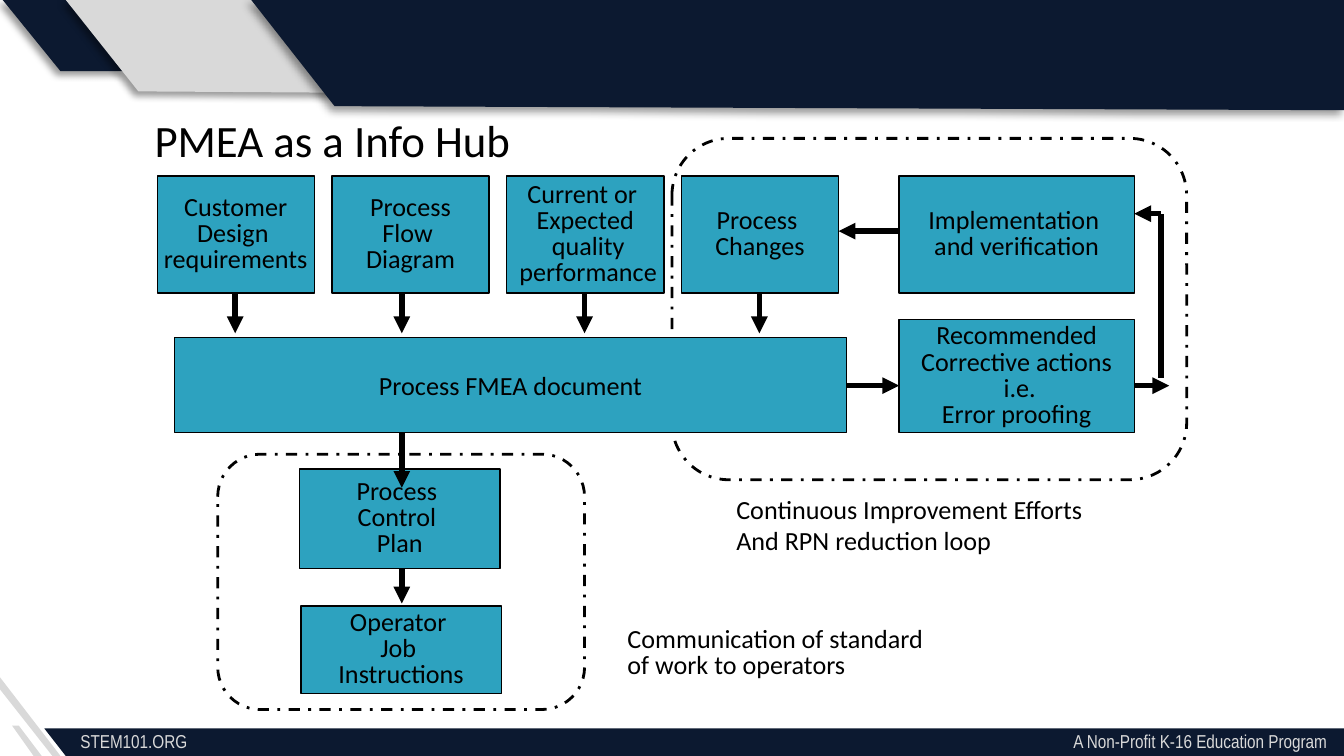
from lxml.etree import SubElement
from pptx import Presentation
from pptx.dml.color import RGBColor
from pptx.enum.dml import MSO_LINE
from pptx.enum.shapes import MSO_CONNECTOR, MSO_SHAPE
from pptx.enum.text import MSO_ANCHOR, MSO_AUTO_SIZE, PP_ALIGN
from pptx.oxml.ns import qn
from pptx.util import Inches, Pt

WIDE = 10
HIGH = WIDE * 9 / 16
UNITS = 1000  # freeform units to the inch
COLORS = {"navy": "0C1930", "gray": "D9D9D9", "teal": "2DA2BF", "ink": "000000"}

# Backdrop: colour, shadow, corner points
BANDS = [
    ("navy", True, [(0.45, 0.53), (0.02, 0), (0.5, 0), (0.93, 0.53)]),
    ("gray", True, [(1.03, 0.68), (0.49, 0), (2.06, 0), (2.59, 0.69)]),
    ("gray", False, [(0.31, HIGH), (0.25, HIGH), (0.09, 5.4), (0.14, 5.4)]),
    ("gray", False, [(0.45, HIGH), (0.39, HIGH), (0, 5.13), (0, 5.04)]),
    ("navy", True, [(2.49, 0.79), (1.87, 0), (WIDE, 0), (WIDE, 0.82)]),
    ("navy", False, [(WIDE, HIGH), (0.49, HIGH), (0.33, 5.42), (WIDE, 5.42)]),
]
FOOT = [("STEM101.ORG", PP_ALIGN.LEFT),
        ("A Non-Profit K-16 Education Program", PP_ALIGN.RIGHT)]

# Flow chart content
TITLE = "PMEA as a Info Hub"
INPUTS = [
    ["Customer", "Design ", "requirements"],
    ["Process", "Flow ", "Diagram"],
    ["Current or ", "Expected", " quality", " performance"],
    ["Process ", "Changes"],
]
ACTIONS = [
    (["Implementation ", "and verification"], 1.31, 0.87),
    (["Recommended", "Corrective actions", " i.e.", "Error proofing"], 2.38, 0.84),
]
PLANS = [
    (["Process ", "Control ", "Plan"], 2.23, 3.49, 0.74),
    (["Operator ", "Job ", "Instructions"], 2.24, 4.51, 0.65),
]
HUB = ["Process FMEA document"]
NOTES = [
    (["Continuous Improvement Efforts", "And RPN reduction loop"],
     (5.38, 3.62, 2.95, 0.57), None),
    (["Communication of standard", "of work to operators"],
     (4.57, 4.62, 2.59, 0.5), 14),
]

# Grid of the chart
LEFT, STEP, TOP = 1.17, 1.3, 1.31
BOX_W, BOX_H = 1.17, 0.87
ACT_X, ACT_W, PLAN_W = 6.69, 1.75, 1.49
ACT_R = ACT_X + ACT_W
HUB_AT = (1.3, 2.51, 5, 0.71)
HUB_R = HUB_AT[0] + HUB_AT[2]
MID_Y = 2.87
STEM_X, LOOP_X, LOOP_Y = 2.99, 8.64, 1.59
DROPS = [1.75, STEM_X, 4.35, 5.65]
FRAMES = [(1.62, 3.38, 2.73, 1.9), (5, 1.03, 3.83, 2.54)]

prs = Presentation()
prs.slide_width, prs.slide_height = Inches(WIDE), Inches(HIGH)
slide = prs.slides.add_slide(prs.slide_layouts[5])
shapes = slide.shapes


def tint(name):
    return RGBColor.from_string(COLORS[name])


def inch(vals):
    return [Inches(v) for v in vals]


def write(frame, lines, size=14, font="Calibri", color="ink",
          align=PP_ALIGN.LEFT, lead=None):
    for i, text in enumerate(lines):
        para = frame.paragraphs[0] if i == 0 else frame.add_paragraph()
        para.alignment = align
        if lead:
            para.line_spacing = Pt(lead)
        run = para.add_run()
        run.text = text
        run.font.size, run.font.name = Pt(size), font
        run.font.color.rgb = tint(color)


def band(color, shade, points):
    first, *rest = [(round(x * UNITS), round(y * UNITS)) for x, y in points]
    pen = shapes.build_freeform(*first, scale=Inches(1) / UNITS)
    pen.add_line_segments(rest, close=True)
    form = pen.convert_to_shape()
    form.fill.solid()
    form.fill.fore_color.rgb = tint(color)
    form.line.fill.background()
    form.shadow.inherit = False
    if shade:
        glow = SubElement(form._element.spPr.find(qn("a:effectLst")),
                          qn("a:outerShdw"), blurRad=str(Pt(4)),
                          dist=str(Pt(3)), dir="8100000", rotWithShape="0")
        ink = SubElement(glow, qn("a:srgbClr"), val=COLORS["ink"])
        SubElement(ink, qn("a:alpha"), val="40000")


def label(lines, at, **look):
    frame = shapes.add_textbox(*inch(at)).text_frame
    frame.word_wrap = True
    write(frame, lines, **look)


def box(lines, at, lead=14):
    rect = shapes.add_shape(MSO_SHAPE.RECTANGLE, *inch(at))
    rect.shadow.inherit = False
    rect.fill.solid()
    rect.fill.fore_color.rgb = tint("teal")
    rect.line.color.rgb = tint("ink")
    rect.line.width = Pt(0.75)
    rect.text_frame.word_wrap = False
    rect.text_frame.vertical_anchor = MSO_ANCHOR.MIDDLE
    write(rect.text_frame, lines, align=PP_ALIGN.CENTER, lead=lead)


def arrow(x1, y1, x2, y2, head=True):
    link = shapes.add_connector(MSO_CONNECTOR.STRAIGHT, *inch((x1, y1, x2, y2)))
    link.line.color.rgb = tint("ink")
    link.line.width = Pt(3)
    prop = link._element.spPr
    if head:
        SubElement(prop.find(qn("a:ln")), qn("a:tailEnd"), type="triangle")
    SubElement(prop, qn("a:effectLst"))


# Backdrop and footer
for item in BANDS:
    band(*item)
for text, align in FOOT:
    label([text], (0.5, 5.38, 9.47, 0.24), size=10, font="Arial Narrow",
          color="gray", align=align)

# Title
title = shapes.title
title.left, title.top, title.width, title.height = inch((1.05, 0.79, 2.87, 0.5))
title.text_frame.auto_size = MSO_AUTO_SIZE.NONE
title.text_frame.word_wrap = False
title.text_frame.vertical_anchor = MSO_ANCHOR.TOP
write(title.text_frame, [TITLE], size=24)

# Arrows that start behind boxes
for x in DROPS:
    arrow(x, 2.02, x, 2.48)
arrow(STEM_X, 4.04, STEM_X, 4.49)
arrow(HUB_R, MID_Y, ACT_X, MID_Y)
arrow(ACT_R, MID_Y, 8.7, MID_Y)
arrow(ACT_X, 1.72, LEFT + 3 * STEP + BOX_W, 1.72)

# Boxes
for i, lines in enumerate(INPUTS):
    box(lines, (LEFT + i * STEP, TOP, BOX_W, BOX_H))
for lines, y, h in ACTIONS:
    box(lines, (ACT_X, y, ACT_W, h))
for lines, x, y, h in PLANS:
    box(lines, (x, y, PLAN_W, h))

# Dashed frames
for at in FRAMES:
    ring = shapes.add_shape(MSO_SHAPE.ROUNDED_RECTANGLE, *inch(at))
    ring.shadow.inherit = False
    ring.fill.background()
    ring.line.color.rgb = tint("ink")
    ring.line.width = Pt(1.5)
    ring.line.dash_style = MSO_LINE.DASH_DOT

# Loop back, hub and captions
arrow(STEM_X, 3.16, STEM_X, 3.63)
arrow(LOOP_X, 2.81, LOOP_X, LOOP_Y, head=False)
arrow(LOOP_X, LOOP_Y, ACT_R, LOOP_Y)
box(HUB, HUB_AT, lead=None)
for lines, at, lead in NOTES:
    label(lines, at, lead=lead)

prs.save("out.pptx")
